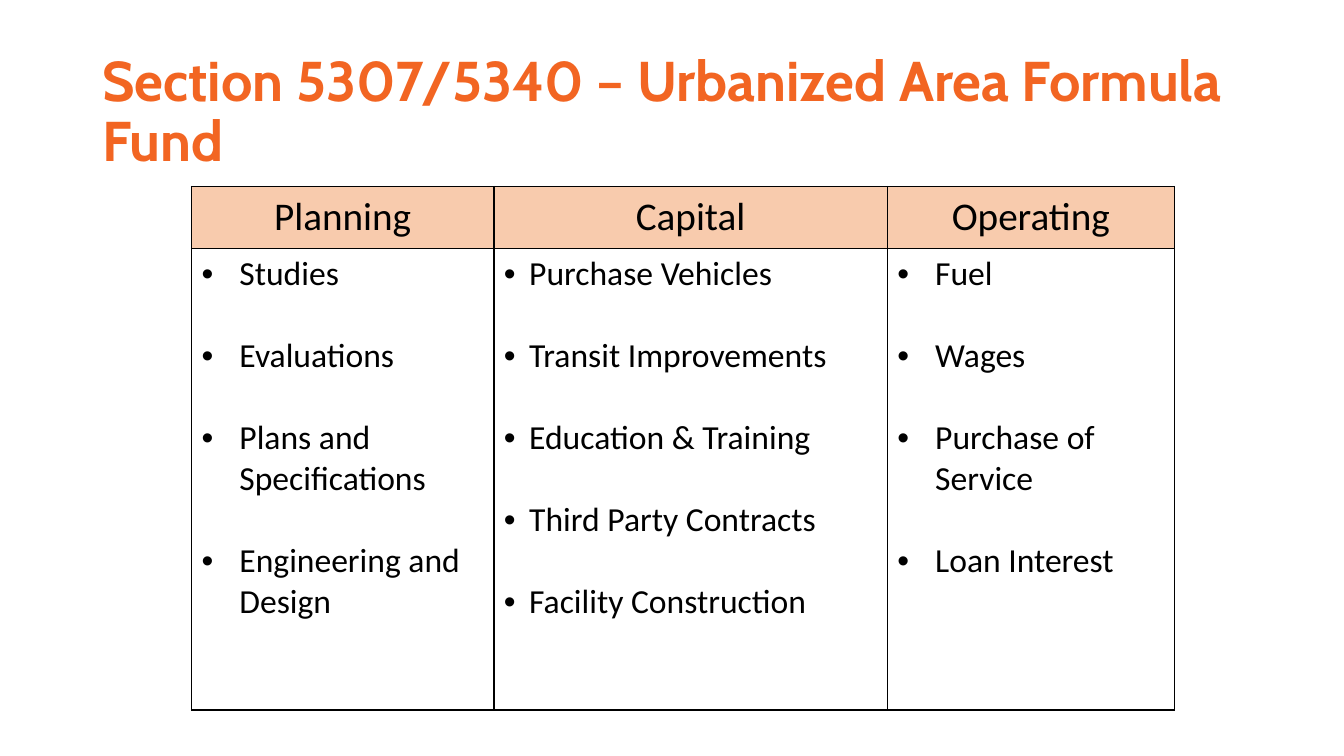
import lxml.etree
import pptx
import pptx.dml.color
import pptx.enum.text
import pptx.oxml
import pptx.oxml.ns
import pptx.util

Pt = pptx.util.Pt
ALIGN = pptx.enum.text.PP_ALIGN
ANCHOR = pptx.enum.text.MSO_ANCHOR

TITLE = "Section 5307/5340 – Urbanized Area Formula Fund"
TITLE_FONT = {"name": "Cabin", "size": Pt(40), "bold": True}
HEADER_FONT = {"name": "Calibri", "size": Pt(28), "bold": False}
BODY_FONT = {"name": "Calibri", "size": Pt(24), "bold": False}

COLUMNS = [
    ("Planning", 216, 27, ["Studies", "Evaluations", "Plans and Specifications",
                           "Engineering and Design"]),
    ("Capital", 281, 18, ["Purchase Vehicles", "Transit Improvements",
                          "Education & Training", "Third Party Contracts",
                          "Facility Construction"]),
    ("Operating", 205, 27, ["Fuel", "Wages", "Purchase of Service",
                            "Loan Interest"]),
]


def rgb(color):
    return pptx.dml.color.RGBColor.from_string(color)


def set_all(obj, values):
    for name, value in values.items():
        setattr(obj, name, value)


def add_text(p, text, font, color):
    r = p.add_run()
    r.text = text
    set_all(r.font, font)
    r.font.color.rgb = rgb(color)


def add_title(s, text):
    box = s.shapes.add_textbox(Pt(66), Pt(28.8), Pt(828), Pt(104.4))
    tf = box.text_frame
    set_all(tf, {"word_wrap": True, "vertical_anchor": ANCHOR.MIDDLE})
    p = tf.paragraphs[0]
    p.line_spacing = 0.9
    add_text(p, text, TITLE_FONT, "F26522")


def set_borders(cell, color):
    tcPr = cell._tc.get_or_add_tcPr()
    for side in ("lnL", "lnR", "lnT", "lnB"):
        tcPr.append(pptx.oxml.parse_xml(
            f'<a:{side} {pptx.oxml.ns.nsdecls("a")} w="{Pt(1)}"><a:solidFill>'
            f'<a:srgbClr val="{color}"/></a:solidFill></a:{side}>'))


def set_bullet(p, indent):
    pPr = p._p.get_or_add_pPr()
    pPr.set("marL", str(Pt(indent)))
    pPr.set("indent", str(-Pt(indent)))
    for tag, key, value in (("a:buFont", "typeface", "Arial"),
                            ("a:buChar", "char", "•")):
        bullet = lxml.etree.SubElement(pPr, pptx.oxml.ns.qn(tag))
        bullet.set(key, value)


def fill_header(cell, text):
    set_borders(cell, "000000")
    cell.fill.solid()
    cell.fill.fore_color.rgb = rgb("F8CBAD")
    cell.vertical_anchor = ANCHOR.MIDDLE
    p = cell.text_frame.paragraphs[0]
    p.alignment = ALIGN.CENTER
    add_text(p, text, HEADER_FONT, "000000")


def fill_list(cell, items, indent):
    set_borders(cell, "000000")
    cell.fill.background()
    tf = cell.text_frame
    for i, item in enumerate(items):
        p = tf.add_paragraph() if i else tf.paragraphs[0]
        set_bullet(p, indent)
        if i:
            p.space_before = Pt(29.3)
        add_text(p, item, BODY_FONT, "000000")


def add_uses_table(s, columns):
    width = sum(column[1] for column in columns)
    frame = s.shapes.add_table(2, len(columns), Pt(136.8), Pt(133.2),
                               Pt(width), Pt(374))
    table = frame.table
    set_all(table, {"first_row": False, "horz_banding": False})
    for row, height in zip(table.rows, (44.4, 329.6)):
        row.height = Pt(height)
    for i, (heading, col_width, indent, items) in enumerate(columns):
        table.columns[i].width = Pt(col_width)
        fill_header(table.cell(0, i), heading)
        fill_list(table.cell(1, i), items, indent)


def main():
    prs = pptx.Presentation()
    set_all(prs, {"slide_width": Pt(960), "slide_height": Pt(540)})
    s = prs.slides.add_slide(prs.slide_layouts[6])
    add_title(s, TITLE)
    add_uses_table(s, COLUMNS)
    prs.save("out.pptx")


if __name__ == "__main__":
    main()
